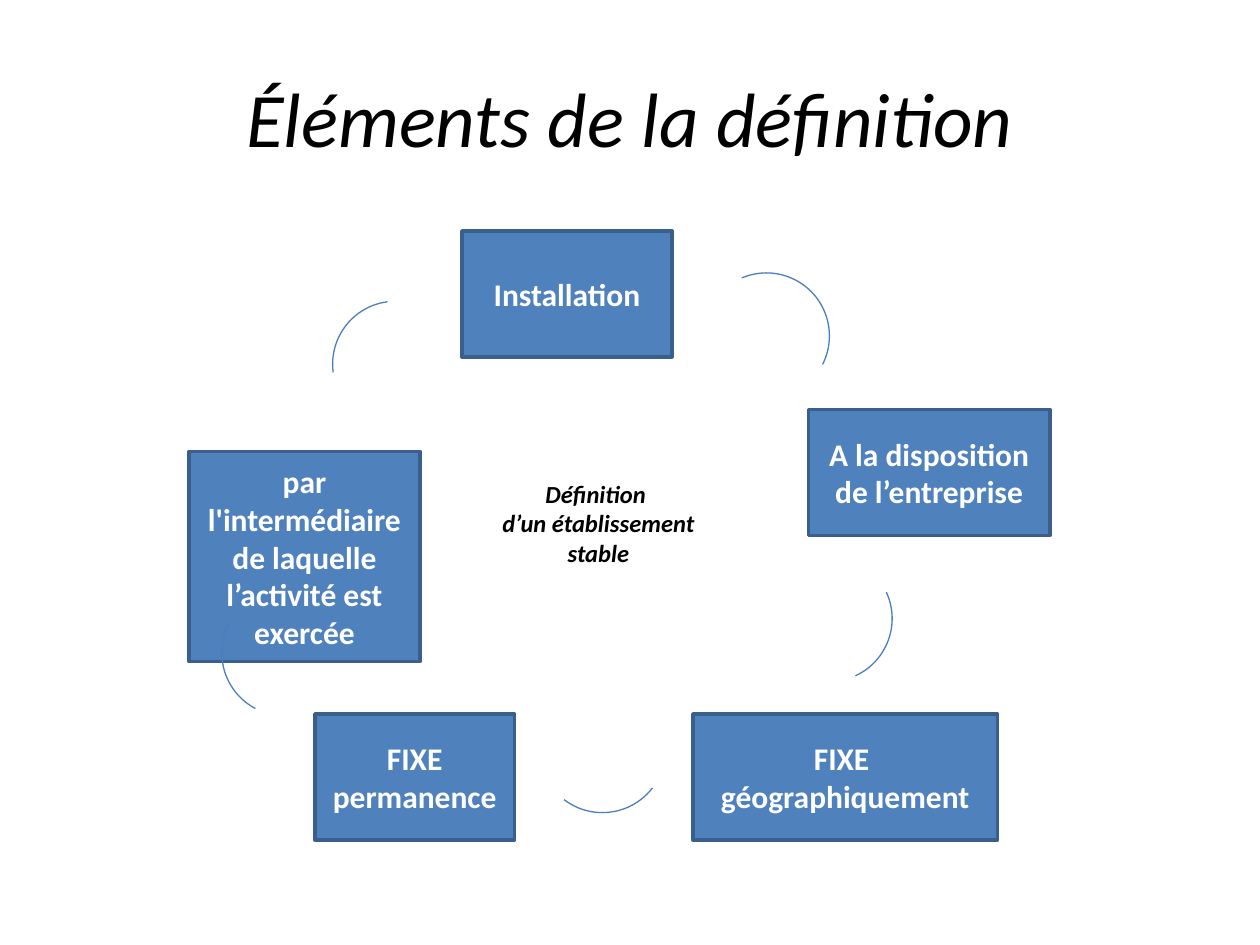
from dataclasses import dataclass

from pptx import Presentation
from pptx.dml.color import RGBColor
from pptx.enum.shapes import MSO_SHAPE
from pptx.enum.text import MSO_ANCHOR, PP_ALIGN
from pptx.util import Pt

RECT, ARC = MSO_SHAPE.RECTANGLE, MSO_SHAPE.ARC
MIDDLE, CENTER = MSO_ANCHOR.MIDDLE, PP_ALIGN.CENTER


@dataclass(frozen=True)
class Theme:
    font: str = "Calibri"
    title_size: float = 44
    box_size: float = 18
    center_size: float = 14
    ink: RGBColor = RGBColor(0x00, 0x00, 0x00)
    box_text: RGBColor = RGBColor(0xFF, 0xFF, 0xFF)
    box_fill: RGBColor = RGBColor(0x4F, 0x81, 0xBD)
    box_line: RGBColor = RGBColor(0x3A, 0x5F, 0x8C)
    arc_line: RGBColor = RGBColor(0x4B, 0x7E, 0xBC)


@dataclass(frozen=True)
class Box:
    text: str
    left: float
    top: float
    width: float
    height: float = 72


@dataclass(frozen=True)
class Arc:
    left: float
    top: float
    rotation: float = 0
    start: float = 270  # degrees, clockwise from the right
    end: float = 0


THEME = Theme()
ARC_SIZE = 72
ANGLE_UNIT = 0.6  # one degree as an adjustment value

BOXES = [
    Box("Installation", 264, 132, 120),
    Box("FIXE \ngéographiquement", 396, 408, 174),
    Box("par l'intermédiaire de laquelle l’activité est exercée", 108, 258, 132, 120),
    Box("A la disposition de l’entreprise", 462, 234, 138),
    Box("FIXE\npermanence", 180, 408, 114),
]
ARCS = [
    Arc(402, 156, start=247.05, end=26.84),
    Arc(308.2, 392.4, 127.4),
    Arc(126.7, 337, 207.8),
    Arc(437.8, 317.5, 65.3),
    Arc(190.1, 172.1, 262.6),
]


def set_text(tf, text: str, size: float, color: RGBColor,
             bold: bool = False, italic: bool = False) -> None:
    tf.text = text
    tf.word_wrap = True
    for p in tf.paragraphs:
        p.alignment = CENTER
        for r in p.runs:
            r.font.name = THEME.font
            r.font.size = Pt(size)
            r.font.color.rgb = color
            r.font.bold = bold
            r.font.italic = italic


def add_box(s, box: Box) -> None:
    sp = s.shapes.add_shape(RECT, Pt(box.left), Pt(box.top), Pt(box.width), Pt(box.height))
    sp.shadow.inherit = False
    sp.fill.solid()
    sp.fill.fore_color.rgb = THEME.box_fill
    sp.line.color.rgb = THEME.box_line
    sp.line.width = Pt(2)
    sp.text_frame.vertical_anchor = MIDDLE
    set_text(sp.text_frame, box.text, THEME.box_size, THEME.box_text, bold=True)


def add_arc(s, arc: Arc) -> None:
    sp = s.shapes.add_shape(ARC, Pt(arc.left), Pt(arc.top), Pt(ARC_SIZE), Pt(ARC_SIZE))
    sp.shadow.inherit = False
    sp.fill.background()
    sp.line.color.rgb = THEME.arc_line
    sp.line.width = Pt(0.75)
    sp.rotation = arc.rotation
    sp.adjustments[0] = arc.start * ANGLE_UNIT
    sp.adjustments[1] = arc.end * ANGLE_UNIT


def main() -> None:
    prs = Presentation()
    prs.slide_width, prs.slide_height = Pt(720), Pt(540)
    s = prs.slides.add_slide(prs.slide_layouts[5])

    # Title
    title = s.shapes.title
    title.left, title.top, title.width, title.height = Pt(36), Pt(21.6), Pt(648), Pt(90)
    title.text_frame.vertical_anchor = MIDDLE
    set_text(title.text_frame, "Éléments de la définition",
             THEME.title_size, THEME.ink, italic=True)

    # Cycle of elements, with arcs between them
    for box in BOXES:
        add_box(s, box)
    for arc in ARCS:
        add_arc(s, arc)

    # Central label
    label = s.shapes.add_textbox(Pt(270), Pt(270), Pt(144), Pt(58.3))
    set_text(label.text_frame, "Définition \nd’un établissement stable",
             THEME.center_size, THEME.ink, bold=True, italic=True)

    prs.save("out.pptx")


if __name__ == "__main__":
    main()
